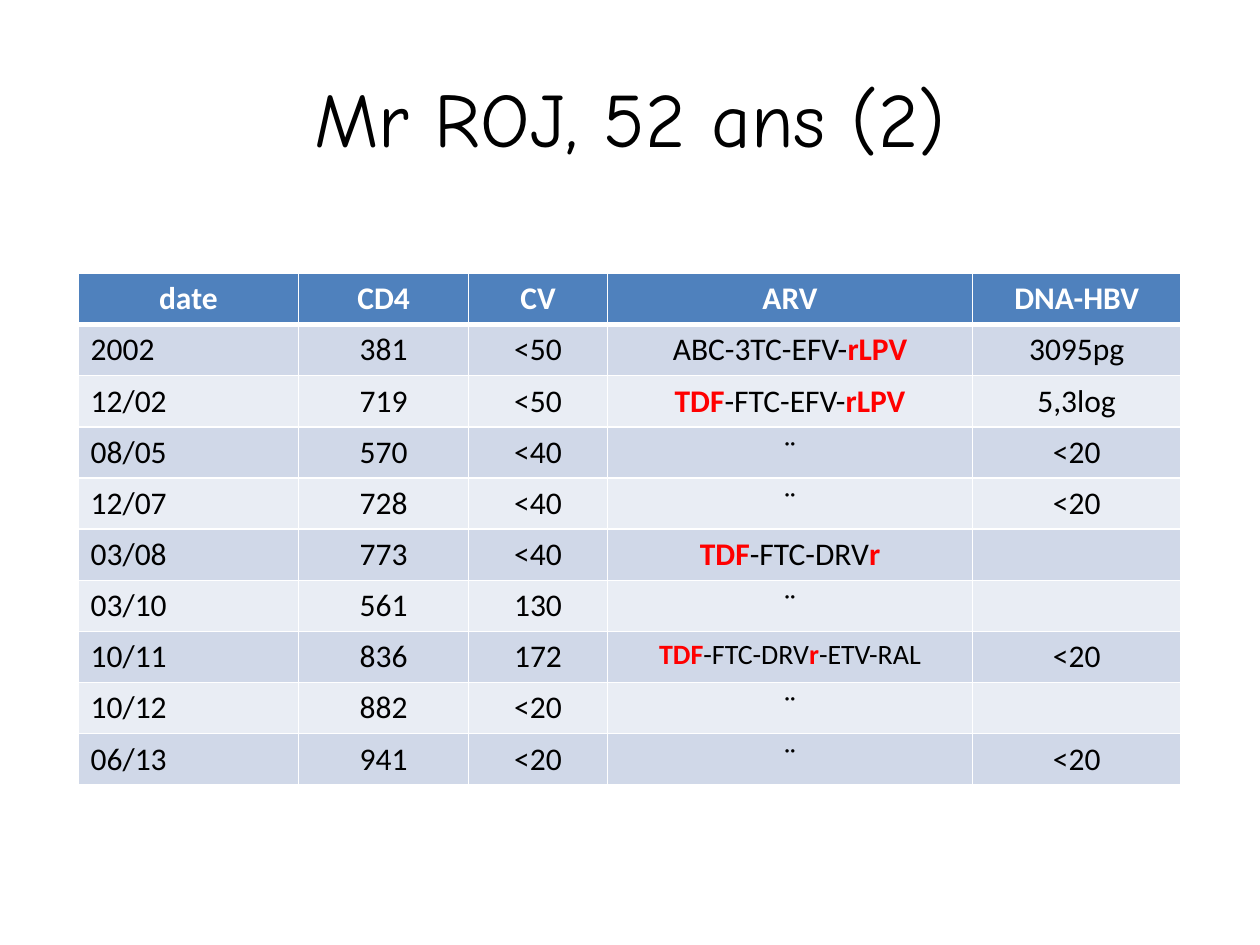
from dataclasses import dataclass

from lxml.etree import SubElement
from pptx import Presentation
from pptx.dml.color import RGBColor
from pptx.enum.text import MSO_ANCHOR, PP_ALIGN
from pptx.oxml.ns import qn
from pptx.util import Inches, Pt


@dataclass(frozen=True)
class Theme:
    title_font: str = "Comic Neue"
    body_font: str = "Calibri"
    title_size: int = 44
    body_size: int = 18
    small_size: int = 16
    text: str = "000000"
    highlight: str = "FF0000"
    white: str = "FFFFFF"
    header_fill: str = "4F81BD"
    band_fills: tuple = ("D0D8E8", "E9EDF4")
    thin_line: int = 1
    thick_line: int = 3


THEME = Theme()
SLIDE_WIDTH, SLIDE_HEIGHT = 10, 7.5
TABLE_LEFT, TABLE_TOP = 0.62, 2.17
COLUMN_WIDTHS = (1.75, 1.35, 1.1, 2.9, 1.65)
TABLE_HEIGHT = 4.06

HEADER = ("date", "CD4", "CV", "ARV", "DNA-HBV")
# Asterisks enclose the highlighted drugs
VISITS = (
    ("2002", "381", "<50", "ABC-3TC-EFV-*rLPV*", "3095pg"),
    ("12/02", "719", "<50", "*TDF*-FTC-EFV-*rLPV*", "5,3log"),
    ("08/05", "570", "<40", "¨", "<20"),
    ("12/07", "728", "<40", "¨", "<20"),
    ("03/08", "773", "<40", "*TDF*-FTC-DRV*r*", ""),
    ("03/10", "561", "130", "¨", ""),
    ("10/11", "836", "172", "*TDF*-FTC-DRV*r*-ETV-RAL", "<20"),
    ("10/12", "882", "<20", "¨", ""),
    ("06/13", "941", "<20", "¨", "<20"),
)
LONG_TEXT = 22  # longer cell texts take the small size


def write_text(text_frame, text, *, font=THEME.body_font, size=THEME.body_size,
               color=THEME.text, bold=False, align=PP_ALIGN.CENTER):
    """Write one paragraph; parts between asterisks are bold and highlighted."""
    paragraph = text_frame.paragraphs[0]
    paragraph.alignment = align
    for index, part in enumerate(text.split("*")):
        if not part:
            continue
        marked = index % 2 == 1
        run = paragraph.add_run()
        run.text = part
        run.font.name = font
        run.font.size = Pt(size)
        run.font.bold = bold or marked
        run.font.color.rgb = RGBColor.from_string(THEME.highlight if marked else color)


def set_borders(cell, *, top, bottom):
    properties = cell._tc.get_or_add_tcPr()
    widths = {"lnL": THEME.thin_line, "lnR": THEME.thin_line, "lnT": top, "lnB": bottom}
    for tag, width in widths.items():
        line = SubElement(properties, qn(f"a:{tag}"), w=str(Pt(width)))
        fill = SubElement(line, qn("a:solidFill"))
        SubElement(fill, qn("a:srgbClr"), val=THEME.white)


def fill_cell(cell, color):
    cell.fill.solid()
    cell.fill.fore_color.rgb = RGBColor.from_string(color)


def add_title(slide, text):
    title = slide.shapes.title
    title.left, title.top = Inches(0.05 * SLIDE_WIDTH), Inches(0.04 * SLIDE_HEIGHT)
    title.width, title.height = Inches(0.9 * SLIDE_WIDTH), Inches(SLIDE_HEIGHT / 6)
    title.text_frame.vertical_anchor = MSO_ANCHOR.MIDDLE
    write_text(title.text_frame, text, font=THEME.title_font, size=THEME.title_size)


def add_header_row(table):
    for column, label in enumerate(HEADER):
        cell = table.cell(0, column)
        set_borders(cell, top=THEME.thin_line, bottom=THEME.thick_line)
        fill_cell(cell, THEME.header_fill)
        write_text(cell.text_frame, label, color=THEME.white, bold=True)


def add_visit_row(table, row, visit):
    top = THEME.thick_line if row == 1 else THEME.thin_line
    for column, text in enumerate(visit):
        cell = table.cell(row, column)
        set_borders(cell, top=top, bottom=THEME.thin_line)
        fill_cell(cell, THEME.band_fills[(row - 1) % 2])
        write_text(cell.text_frame, text,
                   size=THEME.small_size if len(text) > LONG_TEXT else THEME.body_size,
                   align=PP_ALIGN.LEFT if column == 0 else PP_ALIGN.CENTER)


def add_visit_table(slide):
    frame = slide.shapes.add_table(
        len(VISITS) + 1, len(HEADER), Inches(TABLE_LEFT), Inches(TABLE_TOP),
        Inches(sum(COLUMN_WIDTHS)), Inches(TABLE_HEIGHT))
    table = frame.table
    for column, width in zip(table.columns, COLUMN_WIDTHS):
        column.width = Inches(width)
    add_header_row(table)
    for row, visit in enumerate(VISITS, start=1):
        add_visit_row(table, row, visit)


def main():
    presentation = Presentation()
    presentation.slide_width = Inches(SLIDE_WIDTH)
    presentation.slide_height = Inches(SLIDE_HEIGHT)
    title_only = presentation.slide_layouts[5]
    slide = presentation.slides.add_slide(title_only)
    add_title(slide, "Mr ROJ, 52 ans (2)")
    add_visit_table(slide)
    presentation.save("out.pptx")


if __name__ == "__main__":
    main()
